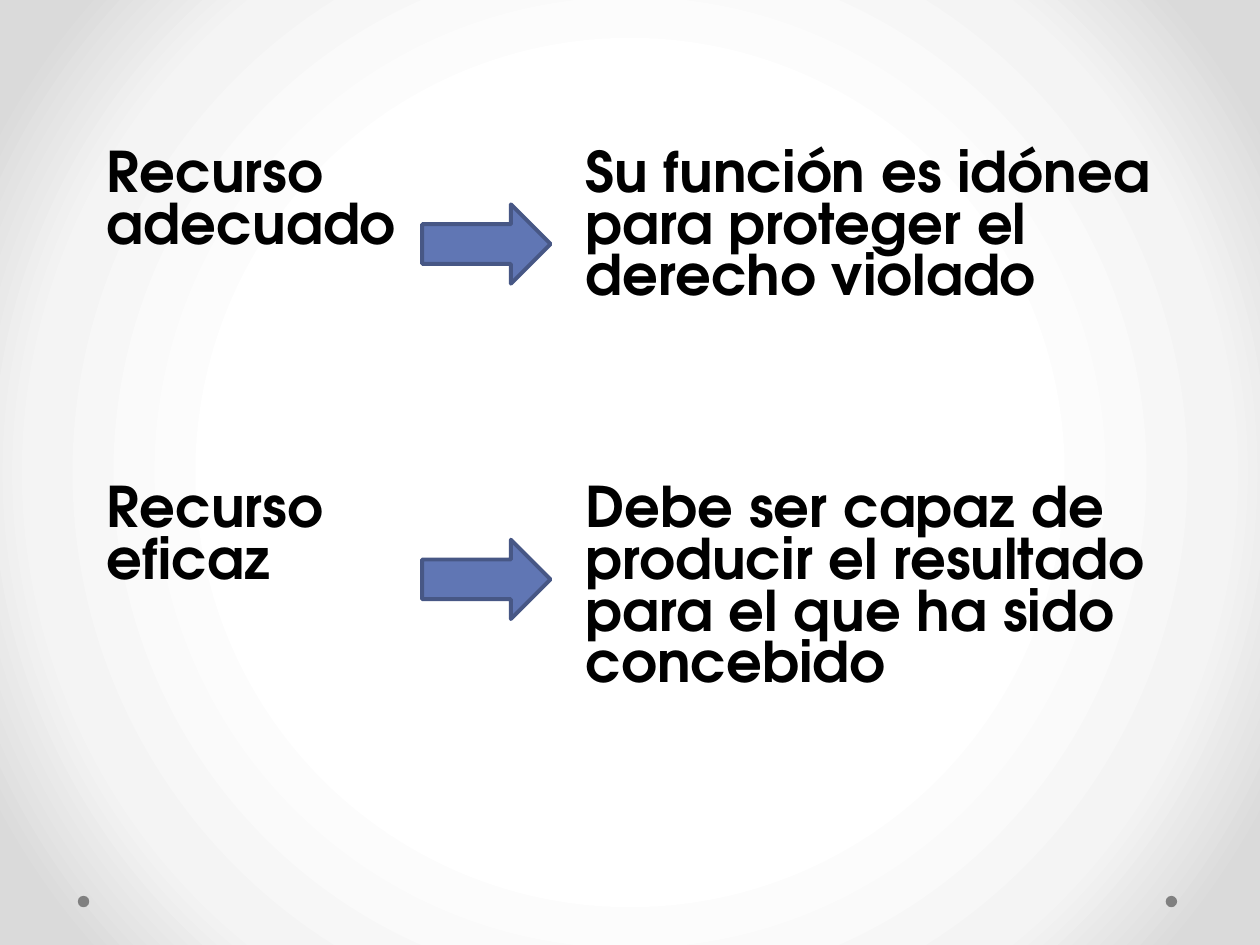
from dataclasses import dataclass

from lxml.etree import SubElement
from pptx import Presentation
from pptx.dml.color import RGBColor as RGB
from pptx.enum.shapes import MSO_SHAPE as Preset
from pptx.oxml.ns import qn
from pptx.util import Cm, Pt

# Content: each kind of remedy and what it must do
REMEDIES = [
    ("Recurso adecuado", "Su función es idónea para proteger el derecho violado"),
    ("Recurso eficaz",
     "Debe ser capaz de producir el resultado para el que ha sido concebido"),
]


@dataclass(frozen=True)
class Theme:
    font: str = "TeX Gyre Adventor"
    text_size: float = 32
    text: str = "000000"
    arrow: str = "6076B4"
    arrow_edge: str = "475785"
    edge_width: float = 2.25
    dot: str = "808080"
    glow: tuple = ((50, "FFFFFF"), (76, "F4F4F4"), (92, "DADADA"))


THEME = Theme()
NO_GRID_STYLE = "{2D5ABB26-0587-4C30-8999-92F81FD0307C}"

# Layout in centimetres
SLIDE_W, SLIDE_H = 25.4, 19.05
TABLE_LEFT, TABLE_TOP = 1.9, 2.92
COLUMNS = (6.4, 3.25, 12.42)
ROWS = (6.76, 7.65)
ARROW_W, ARROW_H = 2.59, 1.6
ARROW_LEFT, ARROW_DROP = 8.51, 1.2
DOT_SIZE, DOT_TOP = 0.23, 18.06
DOT_LEFTS = (1.57, 23.5)


def paint_glow(slide):
    """Radial background, light in the middle."""
    fill = slide.background.fill
    fill.gradient()
    gradient = slide.background._cSld.find(".//" + qn("a:gradFill"))
    for part in list(gradient):
        gradient.remove(part)
    stops = SubElement(gradient, qn("a:gsLst"))
    for position, color in THEME.glow:
        stop = SubElement(stops, qn("a:gs"), pos=str(position * 1000))
        SubElement(stop, qn("a:srgbClr"), val=color)
    radial = SubElement(gradient, qn("a:path"), path="circle")
    SubElement(radial, qn("a:fillToRect"),
               {side: "50000" for side in ("l", "t", "r", "b")})


def add_preset(slide, preset, left, top, width, height, color, edge=None):
    shape = slide.shapes.add_shape(preset, Cm(left), Cm(top), Cm(width), Cm(height))
    shape.shadow.inherit = False
    shape.fill.solid()
    shape.fill.fore_color.rgb = RGB.from_string(color)
    if edge:
        shape.line.color.rgb = RGB.from_string(edge)
        shape.line.width = Pt(THEME.edge_width)
    else:
        shape.line.fill.background()


def write_cell(cell, text):
    cell.text = text
    font = cell.text_frame.paragraphs[0].font
    font.name, font.size, font.bold = THEME.font, Pt(THEME.text_size), True
    font.color.rgb = RGB.from_string(THEME.text)


def add_remedies(slide):
    frame = slide.shapes.add_table(
        len(ROWS), len(COLUMNS), Cm(TABLE_LEFT), Cm(TABLE_TOP),
        Cm(sum(COLUMNS)), Cm(sum(ROWS)))
    table = frame.table
    table.first_row = table.horz_banding = False
    table._tbl.tblPr.find(qn("a:tableStyleId")).text = NO_GRID_STYLE
    for column, width in zip(table.columns, COLUMNS):
        column.width = Cm(width)
    for row, height, (remedy, purpose) in zip(table.rows, ROWS, REMEDIES):
        row.height = Cm(height)
        for cell in row.cells:
            cell.fill.background()
        write_cell(row.cells[0], remedy)
        write_cell(row.cells[2], purpose)


def main():
    deck = Presentation()
    deck.slide_width, deck.slide_height = Cm(SLIDE_W), Cm(SLIDE_H)
    slide = deck.slides.add_slide(deck.slide_layouts[6])
    paint_glow(slide)

    # Corner dots
    for left in DOT_LEFTS:
        add_preset(slide, Preset.OVAL, left, DOT_TOP, DOT_SIZE, DOT_SIZE, THEME.dot)

    # Table, with one arrow from remedy to purpose in each row
    add_remedies(slide)
    for index in range(len(ROWS)):
        row_top = TABLE_TOP + sum(ROWS[:index])
        add_preset(slide, Preset.RIGHT_ARROW, ARROW_LEFT, row_top + ARROW_DROP,
                   ARROW_W, ARROW_H, THEME.arrow, THEME.arrow_edge)

    deck.save("out.pptx")


if __name__ == "__main__":
    main()
